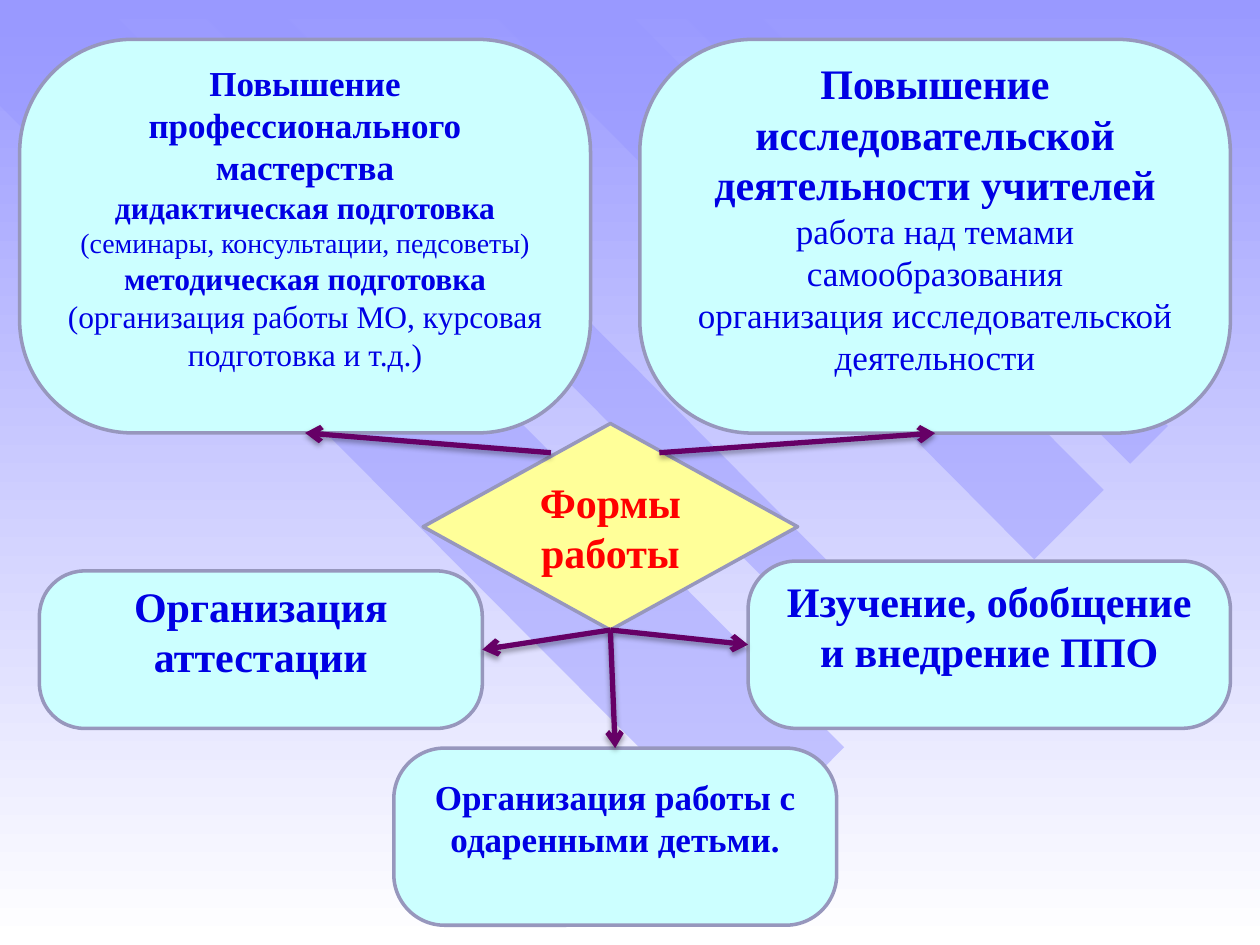
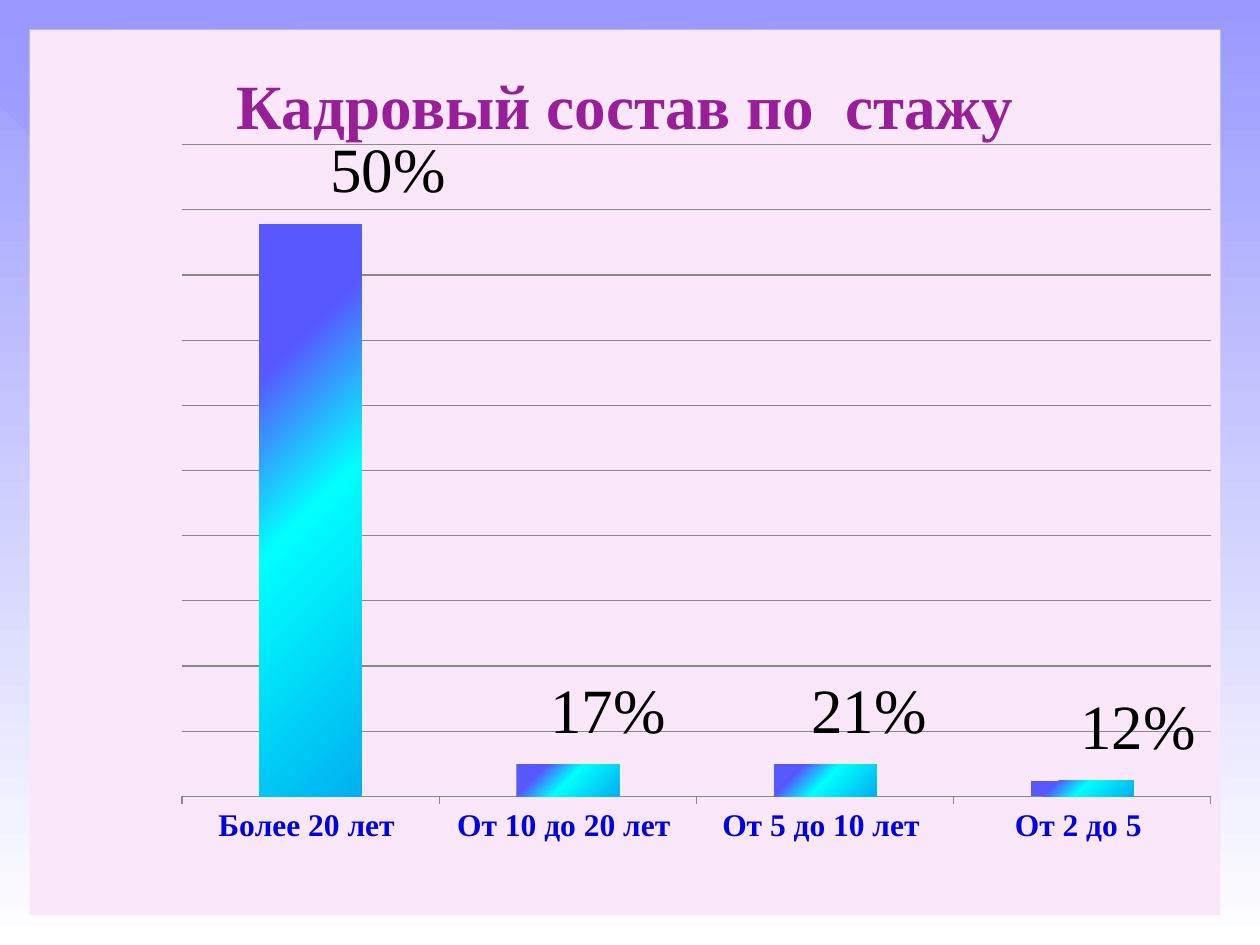
"""Builds two slides: forms of teacher development and staff by length of service."""
from copy import deepcopy

from pptx import Presentation
from pptx.chart import data as chart_data
from pptx.dml.color import RGBColor
from pptx.enum import chart as chart_enum, shapes, text
from pptx.oxml import parse_xml
from pptx.oxml.ns import nsdecls, qn
from pptx.util import Pt

FONT = "Times New Roman"
LILAC = RGBColor(0x99, 0x99, 0xFF)
WHITE = RGBColor(0xFF, 0xFF, 0xFF)
YELLOW = RGBColor(0xFF, 0xFF, 0x99)
AQUA = RGBColor(0xCC, 0xFF, 0xFF)
BORDER = RGBColor(0x97, 0x97, 0xBD)
RED = RGBColor(0xFF, 0x00, 0x00)
BLUE = RGBColor(0x00, 0x00, 0xE4)
AXIS_BLUE = RGBColor(0x00, 0x00, 0xE6)
PURPLE = RGBColor(0x66, 0x00, 0x66)
PLUM = RGBColor(0x99, 0x1F, 0x99)
PINK = RGBColor(0xFA, 0xE8, 0xFA)
BLACK = RGBColor(0x00, 0x00, 0x00)
GRAY = RGBColor(0x88, 0x88, 0x88)
SKY = [(0, LILAC), (1, WHITE)]
BAR_COLOURS = [(0.23, RGBColor(0x58, 0x58, 0xFF)), (0.5, RGBColor(0x00, 0xFF, 0xFF)),
               (1, RGBColor(0x00, 0xB0, 0xF0))]

STRIPES = [
    [(482.4, 427), (57, 0), (0, 0), (0, 60.5), (424, 486)],
    [(154, 0), (531.4, 379.4), (508.3, 402.5), (107.3, 0)],
    [(352, 0), (630.7, 280), (591, 319.7), (273.6, 0)],
    [(381.6, 0), (645.8, 265), (667.4, 243.4), (425.5, 0)],
]

TOP, LEFT, BOTTOM, RIGHT = range(4)
HUB = ("Формы работы", (241.8, 242, 214, 118))
FORMS = [
    {"box": (11.25, 22.5, 326.2, 224.9), "side": BOTTOM, "start": (314.8, 258.7), "lines": [
        [("Повышение профессионального мастерства", 20, True)],
        [("дидактическая подготовка ", 18, True),
         ("(семинары, консультации, педсоветы)", 16, False)],
        [("методическая подготовка ", 18, True),
         ("(организация работы МО, курсовая подготовка и т.д.)", 18, False)]]},
    {"box": (365.6, 22.5, 337.5, 225), "side": BOTTOM, "start": (376.8, 258.7), "lines": [
        [("Повышение исследовательской деятельности учителей", 24, True)],
        [("работа над темами самообразования", 20, False)],
        [("организация исследовательской деятельности", 20, False)]]},
    {"box": (427.5, 320.6, 275.6, 95.6), "side": LEFT, "lines": [
        [("Изучение, обобщение и внедрение ППО", 24, True)]]},
    {"box": (22.5, 326.25, 253.1, 90), "side": RIGHT, "lines": [
        [("Организация аттестации", 24, True)]]},
    {"box": (225, 427.5, 253.1, 101.25), "side": TOP, "lines": [
        [("Организация работы с одаренными детьми.", 20, True)]]},
]

STAFF_TITLE = "Кадровый состав по  стажу"
STAFF_BOX = (16.9, 16.9, 680.5, 506)
STAFF = [
    ("Более 20 лет ", 0.878, "50%", 0.065),
    ("От 10 до 20 лет ", 0.049, "17%", 0.034),
    ("От 5 до 10 лет ", 0.049, "21%", 0.037),
    ("От 2 до 5 ", 0.024, "12%", 0.047),
]
LABEL_RISE = -0.015


def pts(values):
    return [Pt(value) for value in values]


def style(font, size, colour, bold):
    font.name, font.size, font.bold = FONT, Pt(size), bold
    font.color.rgb = colour


def paint_gradient(fill, element, stops, angle):
    fill.gradient()
    fill.gradient_angle = angle
    stop_list = element.xpath(".//a:gsLst")[0]
    while len(stop_list) < len(stops):
        stop_list.append(deepcopy(stop_list[-1]))
    for stop, (position, colour) in zip(fill.gradient_stops, stops):
        stop.position = position
        stop.color.rgb = colour


def decorate_master(master, slide):
    paint_gradient(master.background.fill, master.element, SKY, 270)
    for index, corners in enumerate(STRIPES):
        outline = [pts(corner) for corner in corners]
        builder = slide.shapes.build_freeform(*outline[0], scale=1.0)
        builder.add_line_segments(outline[1:], close=True)
        stripe = builder.convert_to_shape()
        stripe.shadow.inherit = False
        stripe.line.fill.background()
        stripe.fill.solid()
        stripe.fill.fore_color.rgb = LILAC
        tint = stripe.element.xpath("./p:spPr/a:solidFill/a:srgbClr")[0]
        tint.append(parse_xml(f'<a:alpha {nsdecls("a")} val="50000"/>'))
        stripe.element.xpath("./p:nvSpPr/p:cNvPr")[0].set("id", str(20 + index))
        master.shapes.element.insert(2 + index, stripe.element)


def add_card(slide, kind, box, fill, lines, colour, bottom_inset=3.6):
    card = slide.shapes.add_shape(kind, *pts(box))
    card.shadow.inherit = False
    card.fill.solid()
    card.fill.fore_color.rgb = fill
    card.line.color.rgb = BORDER
    card.line.width = Pt(2)
    frame = card.text_frame
    frame.word_wrap = True
    frame.vertical_anchor = text.MSO_ANCHOR.MIDDLE
    frame.margin_bottom = Pt(bottom_inset)
    for index, line in enumerate(lines):
        paragraph = frame.add_paragraph() if index else frame.paragraphs[0]
        paragraph.alignment = text.PP_ALIGN.CENTER
        for wording, size, bold in line:
            run = paragraph.add_run()
            run.text = wording
            style(run.font, size, colour, bold)
    return card


def add_arrow(slide, hub, card, side, start):
    arrow = slide.shapes.add_connector(
        shapes.MSO_CONNECTOR.STRAIGHT, *pts(start or (0, 0)), *pts(start or (0, 0)))
    if start is None:
        arrow.begin_connect(hub, BOTTOM)
    arrow.end_connect(card, side)
    arrow.line.color.rgb = PURPLE
    arrow.line.width = Pt(3)
    arrow.line._get_or_add_ln().append(parse_xml(f'<a:tailEnd {nsdecls("a")} type="arrow"/>'))
    arrow.element.spPr.append(parse_xml(
        f'<a:effectLst {nsdecls("a")}><a:outerShdw blurRad="{Pt(3.1)}" dist="{Pt(1.8)}" '
        'dir="5400000" rotWithShape="0"><a:srgbClr val="000000"><a:alpha val="35000"/>'
        '</a:srgbClr></a:outerShdw></a:effectLst>'))


def build_forms(slide):
    name, box = HUB
    hub = add_card(slide, shapes.MSO_SHAPE.DIAMOND, box, YELLOW, [[(name, 24, True)]], RED)
    cards = []
    for form in FORMS:
        card = add_card(slide, shapes.MSO_SHAPE.ROUNDED_RECTANGLE, form["box"], AQUA,
                        form["lines"], BLUE, bottom_inset=25)
        card.adjustments[0] = 0.287
        cards.append(card)
    for form, card in zip(FORMS, cards):
        add_arrow(slide, hub, card, form["side"], form.get("start"))


def manual_layout(x, y, size=None, edge=False):
    parts = '<c:layoutTarget val="inner"/>' if size else ""
    if edge:
        parts += '<c:xMode val="edge"/><c:yMode val="edge"/>'
    parts += f'<c:x val="{x}"/><c:y val="{y}"/>'
    if size:
        parts += f'<c:w val="{size[0]}"/><c:h val="{size[1]}"/>'
    return parse_xml(f'<c:layout {nsdecls("c")}><c:manualLayout>{parts}'
                     '</c:manualLayout></c:layout>')


def place(parent, layout, after=None):
    for existing in parent.findall(qn("c:layout")):
        parent.remove(existing)
    previous = parent.find(qn(after)) if after else None
    if previous is None:
        parent.insert(0, layout)
    else:
        previous.addnext(layout)


def hide_leader_lines(labels):
    for leader in labels.findall(qn("c:showLeaderLines")):
        leader.set("val", "0")
    labels.append(parse_xml(
        f'<c:extLst {nsdecls("c")}><c:ext uri="{{CE6537A1-D6FC-4f65-9D91-7224C49458BB}}" '
        'xmlns:c15="http://schemas.microsoft.com/office/drawing/2012/chart">'
        '<c15:showLeaderLines val="0"/></c:ext></c:extLst>'))


def build_staff(slide):
    names, shares, captions, shifts = zip(*STAFF)
    staff_data = chart_data.CategoryChartData(number_format="0.00%")
    staff_data.categories = names
    staff_data.add_series("Series 1", shares)
    chart = slide.shapes.add_chart(
        chart_enum.XL_CHART_TYPE.COLUMN_CLUSTERED, *pts(STAFF_BOX), staff_data).chart
    style(chart.font, 18, BLACK, False)
    chart.has_legend = False

    chart.has_title = True
    heading = chart.chart_title.text_frame
    heading.text = STAFF_TITLE
    style(heading.paragraphs[0].runs[0].font, 36, PLUM, True)

    root = chart.element.find(qn("c:chart"))
    place(root.find(qn("c:title")), manual_layout(0.164, 0.028, edge=True), "c:tx")
    place(root.find(qn("c:plotArea")), manual_layout(0.128, 0.13, (0.864, 0.736), edge=True))
    root.addnext(parse_xml(
        f'<c:spPr {nsdecls("c", "a")}><a:solidFill><a:srgbClr val="{PINK}"/></a:solidFill>'
        '<a:ln><a:noFill/></a:ln></c:spPr>'))

    scale = chart.value_axis
    scale.visible = False
    scale.minimum_scale, scale.maximum_scale, scale.major_unit = 0, 1, 0.1
    scale.has_major_gridlines = True
    scale.tick_labels.number_format = "0.00%"
    scale.tick_labels.number_format_is_linked = False
    terms = chart.category_axis
    style(terms.tick_labels.font, 18, AXIS_BLUE, True)
    for rule in (scale.major_gridlines.format.line, terms.format.line):
        rule.color.rgb = GRAY
        rule.width = Pt(0.75)

    plot = chart.plots[0]
    plot.gap_width = 150
    plot.vary_by_categories = False
    service = plot.series[0]
    paint_gradient(service.format.fill, chart.element, BAR_COLOURS, 315)
    service.data_labels.show_value = True
    service.data_labels.number_format = "0.00%"
    service.data_labels.number_format_is_linked = False
    style(service.data_labels.font, 36, BLACK, False)
    for index, caption in enumerate(captions):
        label = service.points[index].data_label
        label.text_frame.text = caption
        style(label.text_frame.paragraphs[0].runs[0].font, 36, BLACK, False)
        label.position = chart_enum.XL_LABEL_POSITION.OUTSIDE_END
    for label, shift in zip(chart.element.xpath(".//c:dLbl"), shifts):
        place(label, manual_layout(shift, LABEL_RISE), "c:idx")
    hide_leader_lines(chart.element.xpath(".//c:ser/c:dLbls")[0])


def main():
    deck = Presentation()
    deck.slide_width, deck.slide_height = Pt(720), Pt(540)
    blank = deck.slide_layouts[6]
    forms = deck.slides.add_slide(blank)
    decorate_master(deck.slide_master, forms)
    build_forms(forms)
    build_staff(deck.slides.add_slide(blank))
    deck.save("out.pptx")


if __name__ == "__main__":
    main()
